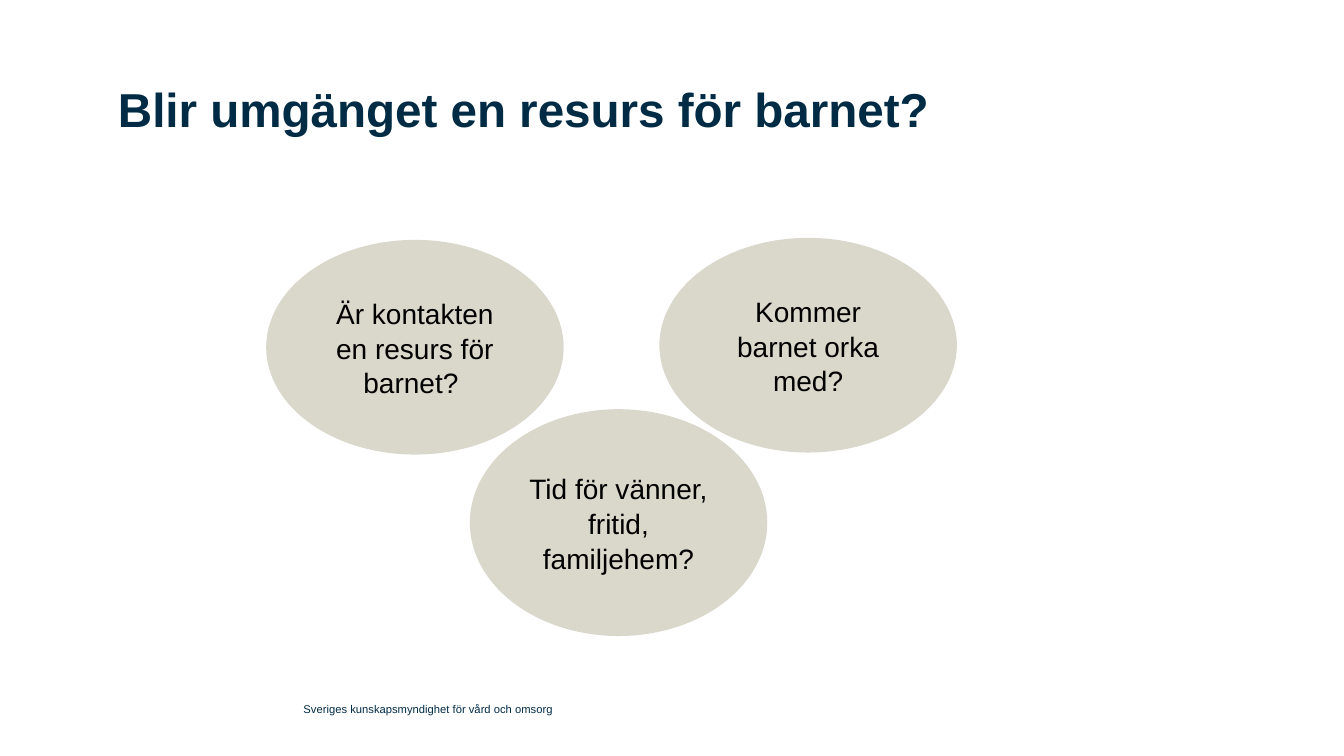
from dataclasses import dataclass

from pptx import Presentation
from pptx.dml.color import RGBColor
from pptx.enum.shapes import MSO_SHAPE
from pptx.enum.text import MSO_ANCHOR, PP_ALIGN
from pptx.util import Inches, Pt


@dataclass(frozen=True)
class Theme:
    """Colours, font and type sizes of the slide."""
    navy: RGBColor = RGBColor(0x00, 0x2B, 0x45)
    sand: RGBColor = RGBColor(0xDA, 0xD7, 0xCB)
    black: RGBColor = RGBColor(0x00, 0x00, 0x00)
    font: str = "Arial"
    title_size: int = 34
    question_size: int = 20
    footer_size: int = 8


THEME = Theme()
SLIDE_WIDTH, SLIDE_HEIGHT = 13.33, 7.5
BUBBLE_WIDTH = 2.95
QUESTIONS = [
    ("Är kontakten en resurs för barnet? ", 2.64, 2.38, 2.13),
    ("Kommer barnet orka med?", 6.54, 2.36, 2.13),
    ("Tid för vänner, fritid, familjehem?", 4.66, 4.06, 2.25),
]


def place(holder, left, top, width, height):
    """Move and size a shape, in inches."""
    holder.left, holder.top = Inches(left), Inches(top)
    holder.width, holder.height = Inches(width), Inches(height)


def write(holder, text, size, colour, align, bold=False):
    """Write one vertically centred paragraph and return it."""
    frame = holder.text_frame
    frame.word_wrap = True
    frame.vertical_anchor = MSO_ANCHOR.MIDDLE
    frame.text = text
    paragraph = frame.paragraphs[0]
    paragraph.alignment = align
    font = paragraph.font
    font.name, font.size, font.bold = THEME.font, Pt(size), bold
    font.color.rgb = colour
    return paragraph


def clear_insets(holder):
    """Remove the inner margins of a text frame."""
    frame = holder.text_frame
    frame.margin_left = frame.margin_right = 0
    frame.margin_top = frame.margin_bottom = 0


def add_title(slide, text):
    """Format the title placeholder."""
    title = slide.shapes.title
    place(title, 1.17, 0.75, 9.96, 0.66)
    clear_insets(title)
    paragraph = write(title, text, THEME.title_size, THEME.navy, PP_ALIGN.LEFT, bold=True)
    paragraph.line_spacing = 1.0


def add_footer(slide, text):
    """Add the sender line at the foot of the slide."""
    footer = slide.shapes.add_textbox(Inches(3.01), Inches(6.89), Inches(5.91), Inches(0.29))
    clear_insets(footer)
    write(footer, text, THEME.footer_size, THEME.navy, PP_ALIGN.LEFT)


def add_question(slide, text, left, top, height):
    """Add one oval holding a question."""
    bubble = slide.shapes.add_shape(
        MSO_SHAPE.OVAL, Inches(left), Inches(top), Inches(BUBBLE_WIDTH), Inches(height))
    bubble.shadow.inherit = False
    bubble.fill.solid()
    bubble.fill.fore_color.rgb = THEME.sand
    bubble.line.fill.background()
    paragraph = write(bubble, text, THEME.question_size, THEME.black, PP_ALIGN.CENTER)
    paragraph.line_spacing = 1.04


def main():
    """Build and save the slide."""
    deck = Presentation()
    deck.slide_width, deck.slide_height = Inches(SLIDE_WIDTH), Inches(SLIDE_HEIGHT)
    slide = deck.slides.add_slide(deck.slide_layouts.get_by_name("Title Only"))
    add_title(slide, "Blir umgänget en resurs för barnet?")
    add_footer(slide, "Sveriges kunskapsmyndighet för vård och omsorg")
    for question in QUESTIONS:
        add_question(slide, *question)
    deck.save("out.pptx")


if __name__ == "__main__":
    main()
